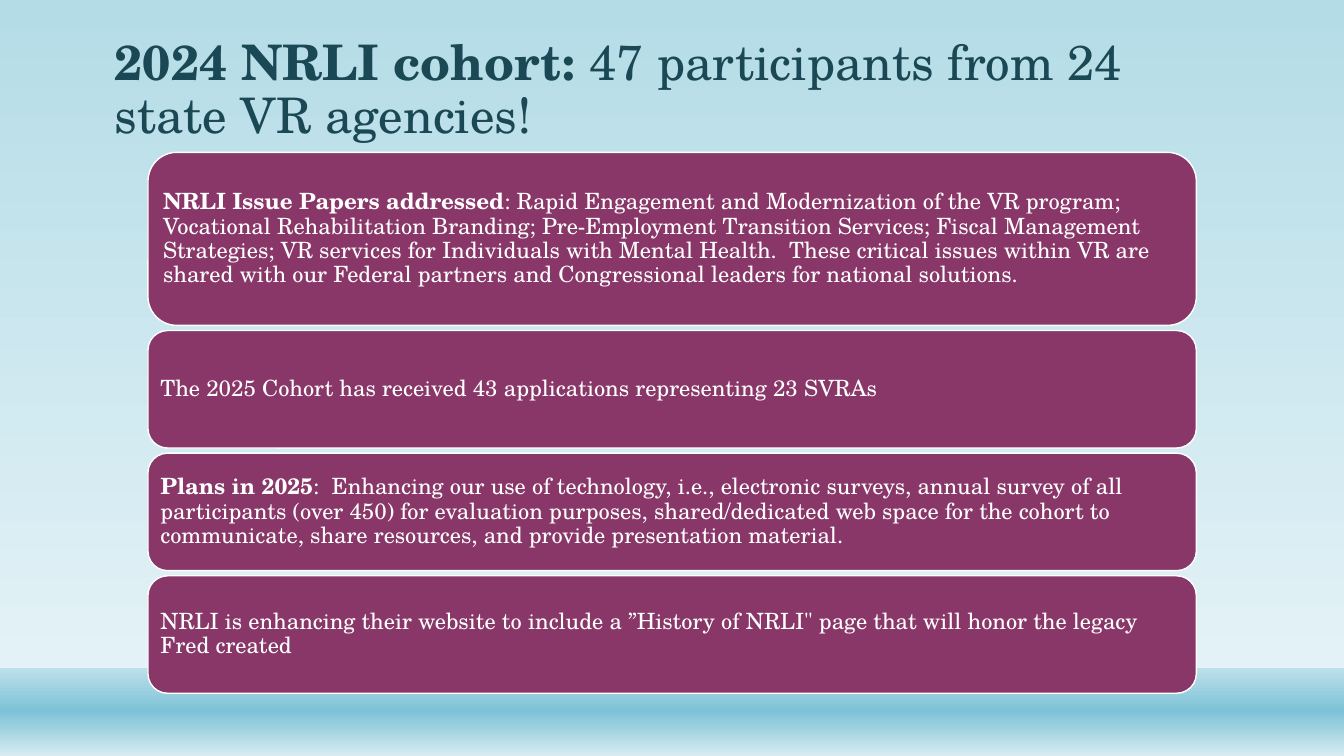
from lxml import etree
from pptx import Presentation
from pptx.dml.color import RGBColor
from pptx.enum.shapes import MSO_SHAPE
from pptx.enum.text import MSO_ANCHOR, MSO_AUTO_SIZE, PP_ALIGN
from pptx.oxml.ns import qn
from pptx.util import Cm, Pt

RECTANGLE, ROUNDED = MSO_SHAPE.RECTANGLE, MSO_SHAPE.ROUNDED_RECTANGLE
MIDDLE, BOTTOM = MSO_ANCHOR.MIDDLE, MSO_ANCHOR.BOTTOM
LEFT = PP_ALIGN.LEFT
NO_AUTOFIT = MSO_AUTO_SIZE.NONE
FONT = "TeX Gyre Schola"
PLUM, WHITE, DARK_TEAL = "893768", "FFFFFF", "1B4855"


def write_text(frame, *parts, size, color, anchor, inset=None):
    """Fill the frame with one paragraph; each part is (text, bold)."""
    frame.word_wrap = True
    frame.auto_size = NO_AUTOFIT
    frame.vertical_anchor = anchor
    if inset is not None:
        frame.margin_left = frame.margin_right = inset
        frame.margin_top = frame.margin_bottom = inset
    para = frame.paragraphs[0]
    para.alignment = LEFT
    para.line_spacing = 0.9
    for text, bold in parts:
        span = para.add_run()
        span.text = text
        span.font.name = FONT
        span.font.size = Pt(size)
        span.font.bold = bold
        span.font.color.rgb = RGBColor.from_string(color)


def paint_gradient(fill, element, stops):
    """Paint top to bottom; each stop is (percent, colour)."""
    fill.gradient()
    fill.gradient_angle = 270
    stop_list = next(element.iter(qn("a:gsLst")))
    for stop in list(stop_list):
        stop_list.remove(stop)
    for percent, color in stops:
        stop = etree.SubElement(stop_list, qn("a:gs"), pos=str(percent * 1000))
        etree.SubElement(stop, qn("a:srgbClr"), val=color)


deck = Presentation()
deck.slide_width, deck.slide_height = Cm(33.87), Cm(19.05)
page = deck.slides.add_slide(deck.slide_layouts[5])

# Sky background and water strip
paint_gradient(page.background.fill, page._element,
               [(0, "B4DCE7"), (88, "E3F2F6"), (100, "E3F2F6")])
water = page.shapes.add_shape(RECTANGLE, 0, Cm(16.84), deck.slide_width, Cm(2.21))
water.shadow.inherit = False
water.line.fill.background()
paint_gradient(water.fill, water._element,
               [(0, "BCE0EA"), (49, "7DC2D6"), (100, "D6ECF2")])

# Title
title = page.shapes.title
title.left, title.top, title.width, title.height = Cm(2.64), Cm(0.74), Cm(28.6), Cm(3.02)
write_text(title.text_frame,
           ("2024 NRLI cohort: ", True),
           ("47 participants from 24 state VR agencies!", False),
           size=35, color=DARK_TEAL, anchor=BOTTOM)

# Stacked cards: (height in cm, heading, body)
cards = [
    (4.36, "NRLI Issue Papers addressed",
     ": Rapid Engagement and Modernization of the VR program; Vocational "
     "Rehabilitation Branding; Pre-Employment Transition Services; Fiscal "
     "Management Strategies; VR services for Individuals with Mental Health.  "
     "These critical issues within VR are shared with our Federal partners and "
     "Congressional leaders for national solutions."),
    (2.96, "", "The 2025 Cohort has received 43 applications representing 23 SVRAs"),
    (2.96, "Plans in 2025",
     ":  Enhancing our use of technology, i.e., electronic surveys, annual survey "
     "of all participants (over 450) for evaluation purposes, shared/dedicated web "
     "space for the cohort to communicate, share resources, and provide "
     "presentation material."),
    (2.96, "",
     "NRLI is enhancing their website to include a ”History of NRLI\" page that "
     "will honor the legacy Fred created"),
]
CARD_GAP = 0.13
top = 3.84
for height, heading, body in cards:
    card = page.shapes.add_shape(ROUNDED, Cm(3.73), Cm(top), Cm(26.42), Cm(height))
    card.shadow.inherit = False
    card.fill.solid()
    card.fill.fore_color.rgb = RGBColor.from_string(PLUM)
    card.line.color.rgb = RGBColor.from_string(WHITE)
    card.line.width = Pt(1)
    parts = [(heading, True)] if heading else []
    write_text(card.text_frame, *parts, (body, False),
               size=16, color=WHITE, anchor=MIDDLE, inset=Cm(0.17))
    top += height + CARD_GAP

deck.save("out.pptx")
